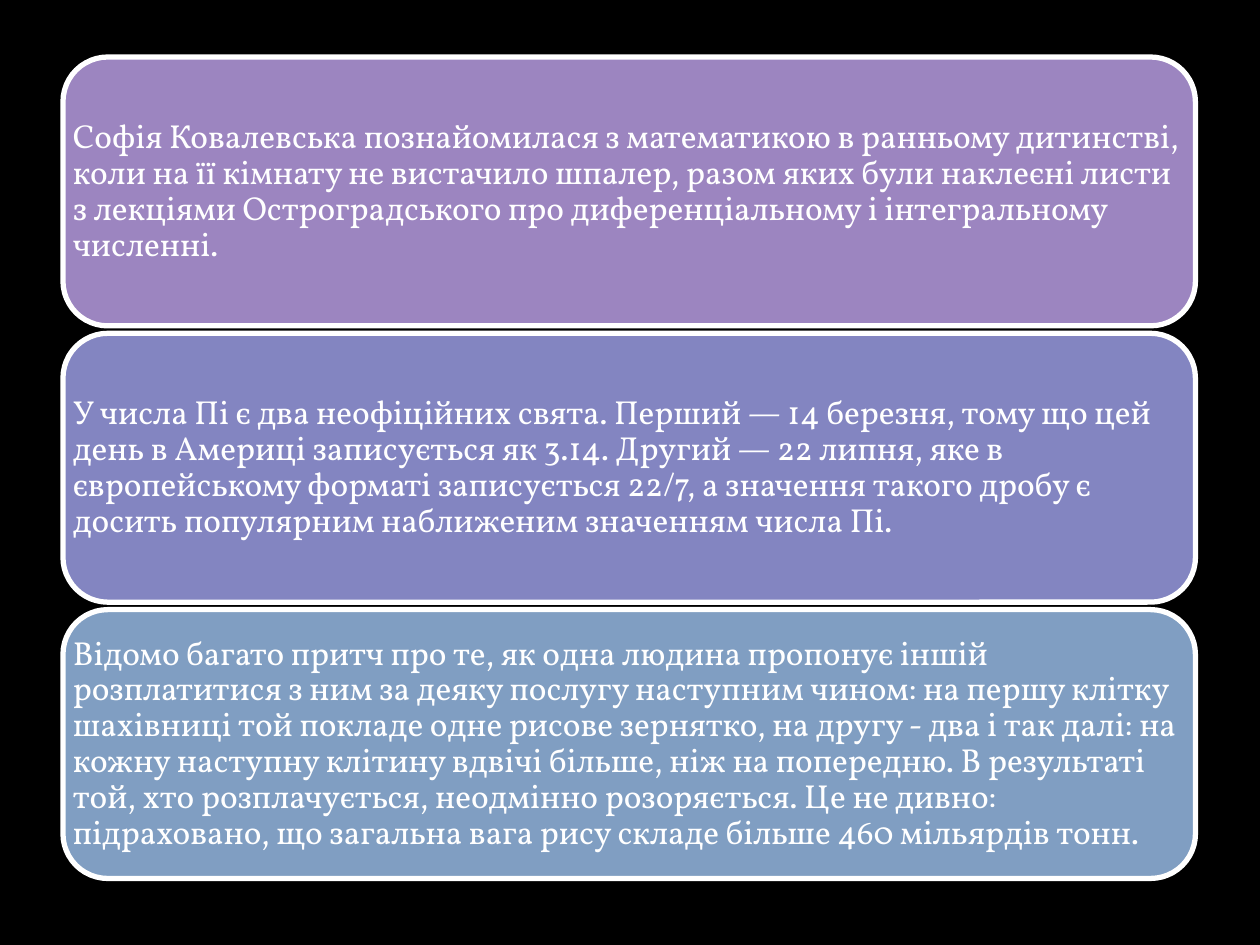
from pptx import Presentation
from pptx.dml.color import RGBColor
from pptx.enum.shapes import MSO_SHAPE
from pptx.enum.text import MSO_ANCHOR, PP_ALIGN
from pptx.util import Cm, Pt

COLORS = {
    "background": "000000",
    "white": "FFFFFF",
    "purple": "9C85C0",
    "indigo": "8385C1",
    "blue": "809EC2",
}
FACTS = [
    ("purple", "Софія Ковалевська познайомилася з математикою в ранньому дитинстві, "
               "коли на її кімнату не вистачило шпалер, разом яких були наклеєні листи "
               "з лекціями Остроградського про диференціальному і інтегральному численні."),
    ("indigo", "У числа Пі є два неофіційних свята. Перший — 14 березня, тому що цей "
               "день в Америці записується як 3.14. Другий — 22 липня, яке в "
               "європейському форматі записується 22/7, а значення такого дробу є "
               "досить популярним наближеним значенням числа Пі."),
    ("blue", "Відомо багато притч про те, як одна людина пропонує іншій "
             "розплатитися з ним за деяку послугу наступним чином: на першу клітку "
             "шахівниці той покладе одне рисове зернятко, на другу - два і так далі: на "
             "кожну наступну клітину вдвічі більше, ніж на попередню. В результаті "
             "той, хто розплачується, неодмінно розоряється. Це не дивно: "
             "підраховано, що загальна вага рису складе більше 460 мільярдів тонн."),
]
LEFT, TOP = Cm(1.27), Cm(1.15)
WIDTH, HEIGHT = Cm(22.83), Cm(5.42)
GAP = Cm(0.15)
INSET = Cm(0.2)


def rgb(name):
    return RGBColor.from_string(COLORS[name])


def add_panel(slide, top, color):
    panel = slide.shapes.add_shape(MSO_SHAPE.ROUNDED_RECTANGLE, LEFT, top, WIDTH, HEIGHT)
    panel.shadow.inherit = False
    panel.fill.solid()
    panel.fill.fore_color.rgb = rgb(color)
    panel.line.color.rgb = rgb("white")
    panel.line.width = Pt(3)


def add_fact(slide, top, fact):
    """Text sits in its own box, as the panel's round corners would narrow its lines."""
    frame = slide.shapes.add_textbox(LEFT, top, WIDTH, HEIGHT).text_frame
    frame.word_wrap = True
    frame.vertical_anchor = MSO_ANCHOR.MIDDLE
    frame.margin_left = frame.margin_right = INSET
    frame.margin_top = frame.margin_bottom = INSET
    paragraph = frame.paragraphs[0]
    paragraph.text = fact
    paragraph.alignment = PP_ALIGN.LEFT
    paragraph.line_spacing = 0.9
    paragraph.font.name = "Vollkorn"
    paragraph.font.size = Pt(19)
    paragraph.font.color.rgb = rgb("white")


def main():
    deck = Presentation()
    deck.slide_width, deck.slide_height = Cm(25.4), Cm(19.05)
    slide = deck.slides.add_slide(deck.slide_layouts.get_by_name("Blank"))
    slide.background.fill.solid()
    slide.background.fill.fore_color.rgb = rgb("background")
    for row, (color, fact) in enumerate(FACTS):
        top = TOP + row * (HEIGHT + GAP)
        add_panel(slide, top, color)
        add_fact(slide, top, fact)
    deck.save("out.pptx")


if __name__ == "__main__":
    main()
